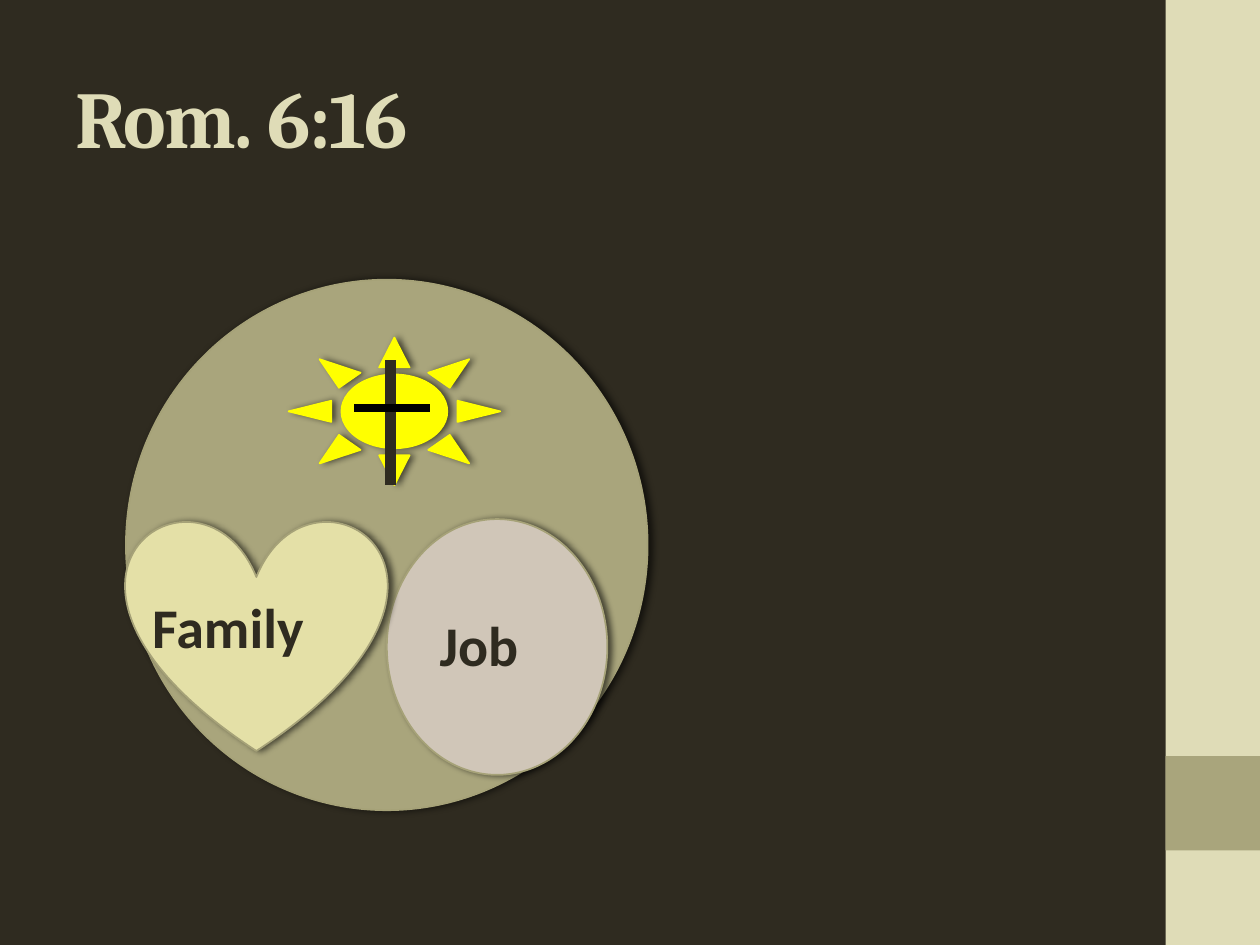
from lxml import etree
from pptx import Presentation
from pptx.dml.color import RGBColor
from pptx.enum.shapes import MSO_CONNECTOR, MSO_SHAPE
from pptx.enum.text import MSO_ANCHOR
from pptx.oxml.ns import qn
from pptx.util import Inches, Pt

RECT, OVAL = MSO_SHAPE.RECTANGLE, MSO_SHAPE.OVAL
HEART, SUN = MSO_SHAPE.HEART, MSO_SHAPE.SUN
STRAIGHT = MSO_CONNECTOR.STRAIGHT
TOP, MIDDLE = MSO_ANCHOR.TOP, MSO_ANCHOR.MIDDLE

DARK = RGBColor(0x2F, 0x2B, 0x20)
CREAM = RGBColor(0xDF, 0xDC, 0xB7)
OLIVE = RGBColor(0xA9, 0xA5, 0x7C)
EDGE = RGBColor(0xA6, 0xA2, 0x78)
TAUPE = RGBColor(0xD0, 0xC6, 0xB8)
PALE = RGBColor(0xE4, 0xE0, 0xA7)
YELLOW = RGBColor(0xFF, 0xFF, 0x00)
BLACK = RGBColor(0x00, 0x00, 0x00)

TITLE = {"name": "Cambria", "size": Pt(46), "bold": True}
LABEL = {"name": "Calibri", "size": Pt(32), "bold": True}


def add_shadow(sp):
    """Give a shape a soft black shadow to its right."""
    effects = sp._element.spPr.find(qn("a:effectLst"))
    shadow = etree.SubElement(effects, qn("a:outerShdw"), blurRad=str(Pt(4)),
                              dist=str(Pt(2)), dir="0", rotWithShape="0")
    color = etree.SubElement(shadow, qn("a:srgbClr"), val=str(BLACK))
    etree.SubElement(color, qn("a:alpha"), val="60000")


def add_figure(s, kind, box, fill, edge=None):
    """Add a filled shape; one with an edge also casts a shadow."""
    sp = s.shapes.add_shape(kind, *map(Inches, box))
    sp.shadow.inherit = False
    sp.fill.solid()
    sp.fill.fore_color.rgb = fill
    if edge is None:
        sp.line.fill.background()
        return
    sp.line.color.rgb = edge
    sp.line.width = Pt(1)
    add_shadow(sp)


def add_text(s, text, box, style, color, anchor=TOP, spacing=None):
    """Add a text box with one styled run."""
    tf = s.shapes.add_textbox(*map(Inches, box)).text_frame
    tf.word_wrap = True
    tf.vertical_anchor = anchor
    r = tf.paragraphs[0].add_run()
    r.text = text
    for name, value in style.items():
        setattr(r.font, name, value)
    r.font.color.rgb = color
    if spacing is not None:
        r.font._element.set("spc", str(spacing))


def add_bar(s, start, end, color, width):
    """Add a straight line without a shadow."""
    line = s.shapes.add_connector(STRAIGHT, *map(Inches, start + end))
    line.line.color.rgb = color
    line.line.width = Pt(width)
    etree.SubElement(line._element.spPr, qn("a:effectLst"))


def main():
    """Build the slide and save it."""
    prs = Presentation()
    prs.slide_width, prs.slide_height = Inches(10), Inches(7.5)
    s = prs.slides.add_slide(prs.slide_layouts[6])
    s.background.fill.solid()
    s.background.fill.fore_color.rgb = DARK

    add_figure(s, RECT, (9.25, 0, 0.75, 7.5), CREAM)
    add_figure(s, RECT, (9.25, 6, 0.75, 0.75), OLIVE)
    add_text(s, "Rom. 6:16", (0.5, 0.3, 8.33, 1.25), TITLE, CREAM, MIDDLE, -100)

    add_figure(s, OVAL, (1, 2.22, 4.14, 4.21), OLIVE, EDGE)
    add_figure(s, OVAL, (3.07, 4.12, 1.75, 2.03), TAUPE, EDGE)
    add_text(s, "Job", (3.39, 4.8, 0.9, 0.64), LABEL, DARK)
    add_figure(s, HEART, (1, 4.12, 2.07, 1.84), PALE, EDGE)
    add_text(s, "Family", (1.11, 4.65, 1.45, 0.64), LABEL, DARK)

    add_figure(s, SUN, (2.29, 2.68, 1.68, 1.17), YELLOW, YELLOW)
    add_bar(s, (3.1, 2.86), (3.1, 3.85), DARK, 6)
    add_bar(s, (2.81, 3.24), (3.41, 3.24), BLACK, 4.5)

    prs.save("out.pptx")


if __name__ == "__main__":
    main()
